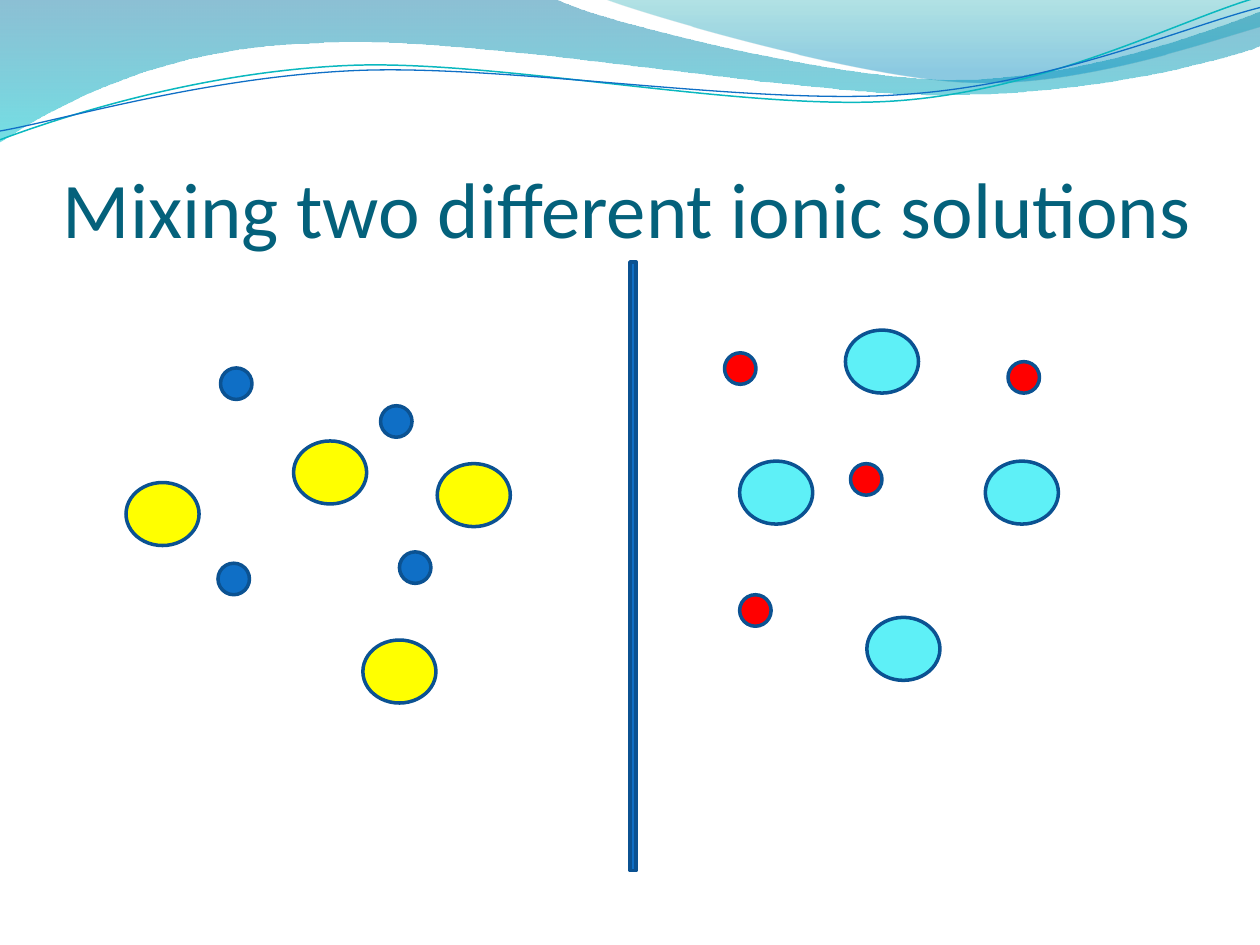
from lxml.etree import SubElement
from pptx import Presentation
from pptx.dml.color import RGBColor
from pptx.enum.shapes import MSO_SHAPE as Shape
from pptx.enum.text import MSO_ANCHOR as Anchor
from pptx.oxml.ns import qn
from pptx.util import Inches, Pt

WIDTH, HEIGHT = 10, 7.5
TITLE = "Mixing two different ionic solutions"
OUTLINE, BLUE = "0B5292", "0F6FC6"
SMALL, LARGE = (0.25, 0.25), (0.58, 0.5)

BANDS = [
    ([(0, 0), (4.4, -0.01), (4.76, 0.17, 6.64, 0.63, 7.58, 0.63),
      (8.53, 0.63, 9.58, 0.26, 10, 0.09), (10.01, 0.36),
      (9.83, 0.44, 8.7, 0.76, 7.46, 0.75), (6.22, 0.75, 3.82, 0.28, 2.57, 0.34),
      (1.29, 0.36, 0.46, 0.83, -0.01, 1.13), (0, 0)],
     [(0, "0074A1", 45), (1, "00C6CF", 55)]),
    ([(4.79, -0.01), (5.09, 0.11, 6.82, 0.62, 7.69, 0.65),
      (8.56, 0.69, 9.61, 0.32, 10, 0.21), (10, 0), (4.79, -0.01)],
     [(0, "00A1A9", 30), (0.8, "008BBF", 45)]),
]
WAVES = [
    ([(0, 1.11), (0.48, 0.93, 1.58, 0.57, 2.77, 0.52),
      (3.95, 0.47, 5.93, 0.89, 7.13, 0.8), (8.33, 0.71, 9.38, 0.15, 9.98, -0.02)],
     "0AB8BF", 0.85),
    ([(0, 1.04), (0.47, 0.96, 1.64, 0.61, 2.83, 0.56),
      (4.03, 0.51, 5.97, 0.84, 7.17, 0.75), (8.36, 0.67, 9.41, 0.21, 10, 0.06)],
     BLUE, 0.75),
]
IONS = [
    (BLUE, SMALL, [(1.75, 2.92), (3.02, 3.22), (3.17, 4.38), (1.73, 4.47)]),
    ("FFFF00", LARGE, [(1, 3.83), (2.33, 3.5), (3.47, 3.68), (2.88, 5.08)]),
    ("FF0000", SMALL, [(5.75, 2.8), (6.75, 3.68), (8, 2.87), (5.87, 4.72)]),
    ("5EF0F7", LARGE, [(6.71, 2.62), (6.88, 4.9), (7.82, 3.66), (5.87, 3.66)]),
]


def color(code):
    return RGBColor.from_string(code)


def bend(shape, segments):
    outline = next(shape._element.iter(qn("a:path")))
    lines = iter(outline.findall(qn("a:lnTo")))
    for segment in segments[1:]:
        first = next(lines)
        if len(segment) == 6:
            first.tag = qn("a:cubicBezTo")
            for line in (next(lines), next(lines)):
                first.append(line[0])
                outline.remove(line)


def add_outline(slide, segments, close):
    points = [(Inches(x), Inches(y)) for segment in segments
              for x, y in zip(segment[::2], segment[1::2])]
    builder = slide.shapes.build_freeform(*points[0])
    builder.add_line_segments(points[1:], close=close)
    shape = builder.convert_to_shape()
    bend(shape, segments)
    shape.shadow.inherit = False
    return shape


def add_band(slide, segments, stops):
    band = add_outline(slide, segments, True)
    band.line.fill.background()
    band.fill.gradient()
    band.fill.gradient_angle = 270
    for stop, (position, code, opacity) in zip(band.fill.gradient_stops, stops):
        stop.position = position
        stop.color.rgb = color(code)
    tones = band._element.spPr.find(qn("a:gradFill")).iter(qn("a:srgbClr"))
    for tone, (position, code, opacity) in zip(tones, stops):
        SubElement(tone, qn("a:alpha"), val=str(opacity * 1000))


def add_wave(slide, segments, code, weight):
    wave = add_outline(slide, segments, False)
    wave.fill.background()
    wave.line.color.rgb = color(code)
    wave.line.width = Pt(weight)


def add_title(slide):
    box = slide.shapes.add_textbox(Inches(0.5), Inches(0.77), Inches(WIDTH - 1), Inches(1.25))
    frame = box.text_frame
    frame.word_wrap = True
    frame.vertical_anchor = Anchor.BOTTOM
    frame.margin_left = frame.margin_right = frame.margin_bottom = 0
    frame.margin_top = Inches(0.05)
    frame.text = TITLE
    font = frame.paragraphs[0].runs[0].font
    font.name, font.size = "Calibri", Pt(45)
    font.color.rgb = color("04617B")


def add_solid(slide, kind, place, size, code):
    shape = slide.shapes.add_shape(kind, *map(Inches, place + size))
    shape.shadow.inherit = False
    shape.fill.solid()
    shape.fill.fore_color.rgb = color(code)
    shape.line.color.rgb = color(OUTLINE)
    shape.line.width = Pt(2)


def main():
    deck = Presentation()
    deck.slide_width, deck.slide_height = Inches(WIDTH), Inches(HEIGHT)
    page = deck.slides.add_slide(deck.slide_layouts[6])
    for band in BANDS:
        add_band(page, *band)
    for wave in WAVES:
        add_wave(page, *wave)
    add_title(page)
    add_solid(page, Shape.RECTANGLE, (WIDTH / 2, 2.08), (0.05, 4.83), BLUE)
    for code, size, places in IONS:
        for place in places:
            add_solid(page, Shape.FLOWCHART_CONNECTOR, place, size, code)
    deck.save("out.pptx")


if __name__ == "__main__":
    main()
